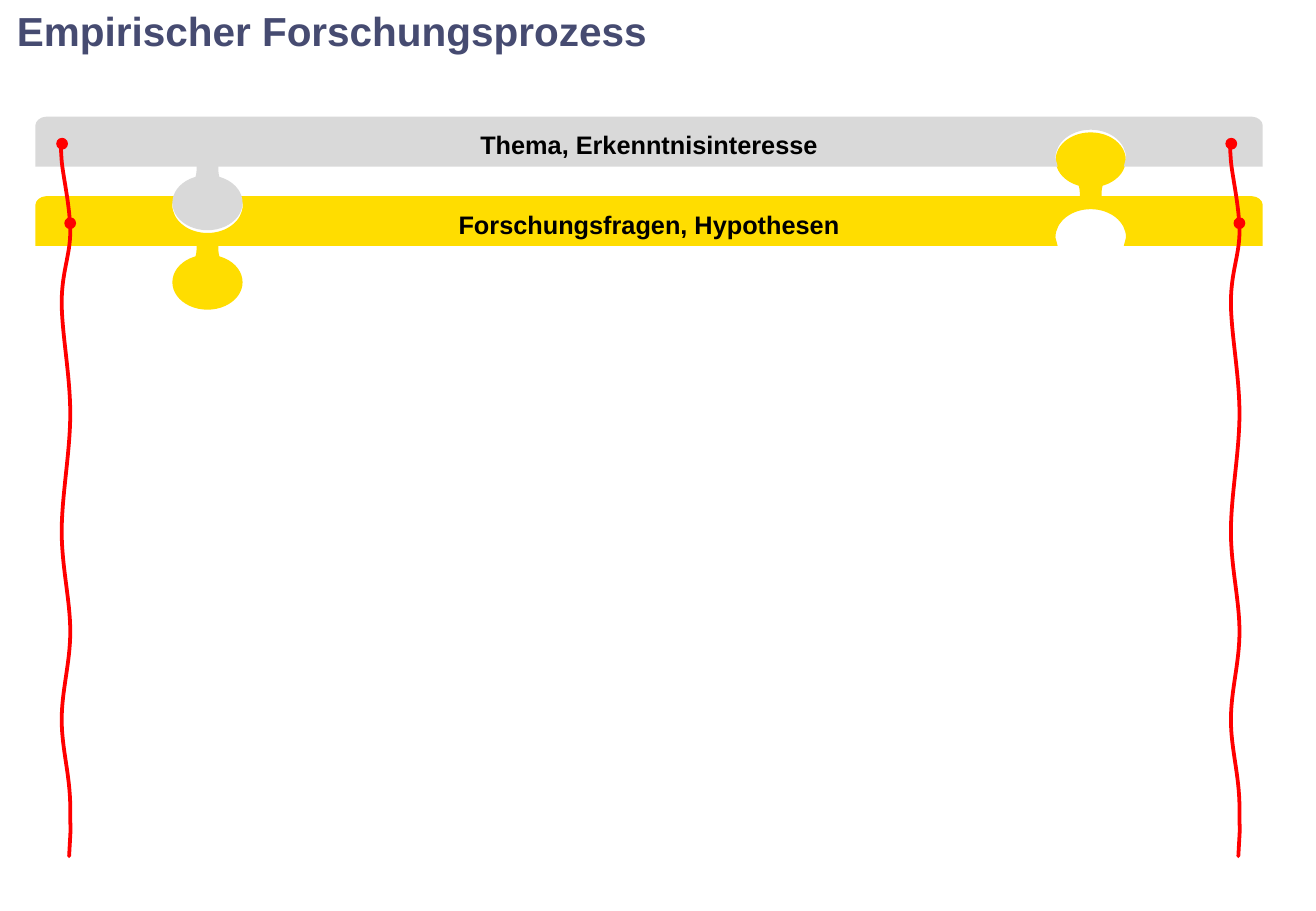
from dataclasses import dataclass

from lxml import etree
from pptx import Presentation
from pptx.dml.color import RGBColor
from pptx.enum.shapes import MSO_SHAPE
from pptx.enum.text import MSO_ANCHOR, MSO_AUTO_SIZE, PP_ALIGN
from pptx.oxml.ns import qn
from pptx.util import Pt

OVAL = MSO_SHAPE.OVAL
MIDDLE = MSO_ANCHOR.MIDDLE
LEFT, CENTER = PP_ALIGN.LEFT, PP_ALIGN.CENTER
GROW = MSO_AUTO_SIZE.SHAPE_TO_FIT_TEXT

FONT = "Arial"
RED, BLACK, TITLE_BLUE = "FF0000", "000000", "464B71"

# Lengths in points
BAR_LEFT, BAR_RIGHT, BAR_HEIGHT = 21, 748.4, 29.5
CORNER_X, CORNER_Y = 6.2, 5
KNOB_WIDTH, KNOB_HEIGHT, KNOB_TOP = 41.6, 32.6, 34.7
LEFT_JOINT, RIGHT_JOINT = 123, 646.5
DOT_SIZE, DOT_DROP = 7, 16
THREAD_GAP = 693

# A segment holds one point (a line) or three points (a cubic curve)
Segment = tuple[float, ...]

# Relative to the joint's centre and the bar's top
NOTCH: list[Segment] = [
    (19.6, BAR_HEIGHT), (20.9, 24.4),
    (20.9, 15.1, 11.5, 7.7, 0, 7.7),
    (-11.5, 7.7, -20.9, 15.1, -20.9, 24.4),
    (-19.6, BAR_HEIGHT),
]
NECK: list[Segment] = [
    (-9.4, 48.2),
    (-1.4, 45.4, 2.2, 30.2, 2.2, 26.6),
    (2.9, 23, -5, 23.8, -6.6, 26.6),
    (-5.8, 33.8, -7.2, 39.6, -11.5, 41),
    (-9.4, 48.2),
]
THREAD: list[Segment] = [
    (37.2, 84.2),
    (36, 90, 36, 86.4, 36.6, 95.5),
    (37.4, 104.4, 41.7, 123, 41.7, 137.3),
    (41.7, 151.2, 36.6, 161.3, 36.6, 179.2),
    (36.6, 197.3, 41.7, 222.5, 41.7, 245.2),
    (41.7, 267.8, 36.6, 293.8, 36.6, 315),
    (36.6, 336.2, 41.7, 355.7, 41.7, 374.4),
    (41.7, 393.1, 36.6, 409, 36.6, 426.7),
    (36.6, 444.2, 41.7, 459.4, 41.7, 479),
    (41.7, 499, 42.3, 483.8, 41, 507.5),
]


@dataclass(frozen=True)
class Phase:
    label: str
    color: str
    top: float
    dot_x: float
    joins_above: bool


PHASES = [
    Phase("Forschungsfragen, Hypothesen", "FFDD00", 116.3, 41.6, True),
    Phase("Thema, Erkenntnisinteresse", "D9D9D9", 69.2, 36.8, False),
]


def rgb(color: str) -> RGBColor:
    return RGBColor.from_string(color)


def mirror(segments: list[Segment], flip_x: bool, flip_y: bool) -> list[Segment]:
    """Mirror segments about the joint's centre and the bar's middle."""
    return [
        tuple(
            (BAR_HEIGHT - value if flip_y else value) if index % 2
            else (-value if flip_x else value)
            for index, value in enumerate(segment)
        )
        for segment in segments
    ]


def shift(segments: list[Segment], x: float, y: float) -> list[Segment]:
    return [
        tuple(value + (y if index % 2 else x) for index, value in enumerate(segment))
        for segment in segments
    ]


def paint(shape, color: str) -> None:
    shape.shadow.inherit = False
    shape.fill.solid()
    shape.fill.fore_color.rgb = rgb(color)
    shape.line.fill.background()


def draw_outline(shapes, segments: list[Segment], close: bool = True):
    """Draw a freeform, joining the points of each curve into one cubic."""
    points = [
        (Pt(x), Pt(y))
        for segment in segments
        for x, y in zip(segment[::2], segment[1::2])
    ]
    builder = shapes.build_freeform(*points[0])
    builder.add_line_segments(points[1:], close=close)
    shape = builder.convert_to_shape()
    lines = iter(list(shape.element.iter(qn("a:lnTo"))))
    for segment in segments[1:]:
        line = next(lines)
        if len(segment) == 6:
            curve = etree.Element(qn("a:cubicBezTo"))
            line.addprevious(curve)
            for part in (line, next(lines), next(lines)):
                curve.append(part[0])
                part.getparent().remove(part)
    return shape


def draw_oval(shapes, x: float, y: float, width: float, height: float, color: str) -> None:
    oval = shapes.add_shape(OVAL, Pt(x), Pt(y), Pt(width), Pt(height))
    paint(oval, color)


def add_span(para, text: str, size: float, color: str) -> None:
    span = para.add_run()
    span.text = text
    span.font.name = FONT
    span.font.size = Pt(size)
    span.font.bold = True
    span.font.color.rgb = rgb(color)


def draw_bar(shapes, phase: Phase) -> None:
    bottom_notch = shift(NOTCH, RIGHT_JOINT, 0)
    top_notch = shift(mirror(NOTCH, True, True), LEFT_JOINT, 0) if phase.joins_above else []
    outline = [
        (BAR_LEFT + CORNER_X, 0), *top_notch, (BAR_RIGHT - CORNER_X, 0),
        (BAR_RIGHT - CORNER_X / 2, 0, BAR_RIGHT, CORNER_Y / 2, BAR_RIGHT, CORNER_Y),
        (BAR_RIGHT, BAR_HEIGHT), *bottom_notch, (BAR_LEFT, BAR_HEIGHT), (BAR_LEFT, CORNER_Y),
        (BAR_LEFT, CORNER_Y / 2, BAR_LEFT + CORNER_X / 2, 0, BAR_LEFT + CORNER_X, 0),
    ]
    bar = draw_outline(shapes, shift(outline, 0, phase.top))
    paint(bar, phase.color)
    frame = bar.text_frame
    frame.word_wrap = True
    frame.vertical_anchor = MIDDLE
    para = frame.paragraphs[0]
    para.alignment = CENTER
    para.line_spacing = 1.2
    add_span(para, phase.label, 15, BLACK)


def draw_knob(shapes, phase: Phase, center: float, upward: bool) -> None:
    drop = BAR_HEIGHT - KNOB_TOP - KNOB_HEIGHT if upward else KNOB_TOP
    draw_oval(shapes, center - KNOB_WIDTH / 2, phase.top + drop,
              KNOB_WIDTH, KNOB_HEIGHT, phase.color)
    for flip_x in (False, True):
        neck = shift(mirror(NECK, flip_x, upward), center, phase.top)
        paint(draw_outline(shapes, neck), phase.color)


def main() -> None:
    deck = Presentation()
    deck.slide_width, deck.slide_height = Pt(780), Pt(540)
    page = deck.slides.add_slide(deck.slide_layouts[5])

    # Title
    title = page.shapes.title
    title.left, title.top, title.width, title.height = Pt(0), Pt(0), Pt(394), Pt(36.4)
    frame = title.text_frame
    frame.margin_left, frame.margin_right = Pt(10), Pt(7.2)
    frame.margin_top = frame.margin_bottom = Pt(3.6)
    frame.vertical_anchor = MIDDLE
    frame.word_wrap = False
    frame.auto_size = GROW
    frame.paragraphs[0].alignment = LEFT
    add_span(frame.paragraphs[0], "Empirischer Forschungsprozess", 24, TITLE_BLUE)

    # Puzzle pieces with their dots
    for phase in PHASES:
        piece = page.shapes.add_group_shape().shapes
        draw_bar(piece, phase)
        draw_knob(piece, phase, LEFT_JOINT, upward=False)
        if phase.joins_above:
            draw_knob(piece, phase, RIGHT_JOINT, upward=True)
        for offset in (0, THREAD_GAP):
            draw_oval(piece, phase.dot_x + offset - DOT_SIZE / 2,
                      phase.top + DOT_DROP - DOT_SIZE / 2, DOT_SIZE, DOT_SIZE, RED)

    # Red threads with round ends
    for offset in (0, THREAD_GAP):
        thread = draw_outline(page.shapes, shift(THREAD, offset, 0), close=False)
        thread.shadow.inherit = False
        thread.fill.background()
        thread.line.color.rgb = rgb(RED)
        thread.line.width = Pt(2.25)
        thread.element.spPr.find(qn("a:ln")).set("cap", "rnd")

    deck.save("out.pptx")


if __name__ == "__main__":
    main()
